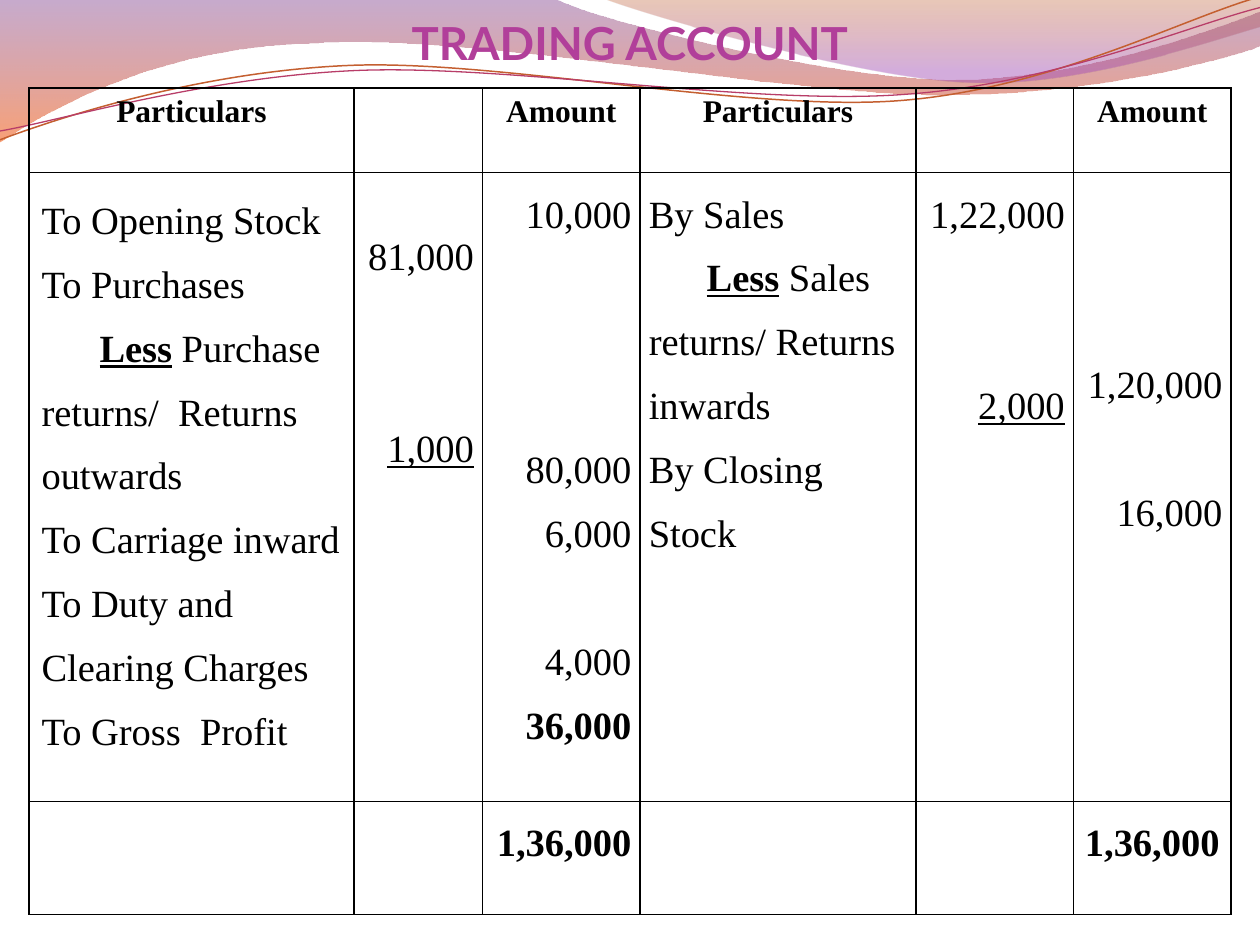
from pptx import Presentation
from pptx.dml.color import RGBColor
from pptx.enum.text import MSO_ANCHOR, PP_ALIGN
from pptx.oxml.xmlchemy import OxmlElement
from pptx.util import Inches, Pt

THEME = {
    "title_font": "Lato", "title_size": 26, "title": "B13F9A",
    "table_font": "Times New Roman", "header_size": 18, "entry_size": 22,
    "ink": "000000", "border_width": 1,
}
LINE_SPACING = 1.5
ROW_PITCH = 0.507  # height in inches of one entry line
LESS_INDENT = 0.46

TITLE = "TRADING ACCOUNT"
HEADERS = ["Particulars", "", "Amount", "Particulars", "", "Amount"]
COLUMN_WIDTHS = [2.58, 1.02, 1.25, 2.19, 1.25, 1.25]
ROW_HEIGHTS = [0.67, 4.99, 0.9]

# Descriptions; a pair is an indented deduction: underlined word, remainder.
DEBITS = ["To Opening Stock", "To Purchases",
          ("Less", " Purchase returns/  Returns outwards"),
          "To Carriage inward", "To Duty and Clearing Charges", "To Gross  Profit"]
CREDITS = ["By Sales", ("Less", " Sales returns/ Returns inwards"), "By Closing Stock"]

# Figures: line they stand on, amount, emphasis.
AMOUNTS = {
    1: [(1, "81,000", ""), (4, "1,000", "underline")],
    2: [(0, "10,000", ""), (4, "80,000", ""), (5, "6,000", ""),
        (7, "4,000", ""), (8, "36,000", "bold")],
    4: [(0, "1,22,000", ""), (3, "2,000", "underline")],
    5: [(3, "1,20,000", ""), (5, "16,000", "")],
}
TOTALS = {2: ("1,36,000", PP_ALIGN.RIGHT), 5: ("1,36,000", PP_ALIGN.CENTER)}

# Outlines: a start point, then line ends (2 values) or cubic curves (6 values).
# Gradient stops: position, colour, opacity in percent.
BANDS = [
    ([(0, 0), (4.4, -0.01), (4.76, 0.17, 6.64, 0.63, 7.58, 0.63),
      (8.53, 0.63, 9.58, 0.26, 10, 0.09), (10.01, 0.36),
      (9.83, 0.44, 8.7, 0.76, 7.46, 0.75), (6.22, 0.75, 3.82, 0.28, 2.57, 0.34),
      (1.29, 0.36, 0.46, 0.83, -0.01, 1.13), (0, 0)],
     [(0, "834591", 45), (1, "F35307", 55)]),
    ([(4.79, -0.01), (5.09, 0.11, 6.82, 0.62, 7.69, 0.65),
      (8.56, 0.69, 9.61, 0.32, 10, 0.21), (10, 0), (4.79, -0.01)],
     [(0, "B74915", 30), (0.8, "A14BB4", 45)]),
]
WAVES = [
    ([(0, 1.11), (0.48, 0.93, 1.58, 0.57, 2.77, 0.52),
      (3.95, 0.47, 5.93, 0.89, 7.13, 0.8), (8.33, 0.71, 9.38, 0.15, 9.98, -0.02)],
     "C45F30", 0.85),
    ([(0, 1.04), (0.47, 0.96, 1.64, 0.61, 2.83, 0.56),
      (4.03, 0.51, 5.97, 0.84, 7.17, 0.75), (8.36, 0.67, 9.41, 0.21, 10, 0.06)],
     "B83D68", 0.75),
]


def color(name):
    return RGBColor.from_string(THEME.get(name, name))


def draw_outline(slide, outline, close):
    """Draw through every point, then merge each curve's three lines into one."""
    start, *rest = [(Inches(segment[i]), Inches(segment[i + 1]))
                    for segment in outline for i in range(0, len(segment), 2)]
    builder = slide.shapes.build_freeform(*start)
    builder.add_line_segments(rest, close=close)
    shape = builder.convert_to_shape()
    shape.shadow.inherit = False
    lines = iter(shape._element.xpath(".//a:path/a:lnTo"))
    for segment in outline[1:]:
        parts = [next(lines) for _ in range(len(segment) // 2)]
        if len(parts) == 3:
            curve = OxmlElement("a:cubicBezTo")
            parts[0].addprevious(curve)
            for part in parts:
                curve.append(part[0])
                part.getparent().remove(part)
    return shape


def draw_band(slide, outline, stops):
    band = draw_outline(slide, outline, close=True)
    band.line.fill.background()
    band.fill.gradient()
    band.fill.gradient_angle = 270
    for stop, (position, shade, _) in zip(band.fill.gradient_stops, stops):
        stop.position = position
        stop.color.rgb = color(shade)
    for rgb, (_, _, opacity) in zip(band._element.xpath(".//a:gs/a:srgbClr"), stops):
        alpha = OxmlElement("a:alpha")
        alpha.set("val", str(opacity * 1000))
        rgb.append(alpha)


def draw_wave(slide, outline, shade, width):
    wave = draw_outline(slide, outline, close=False)
    wave.fill.background()
    wave.line.color.rgb = color(shade)
    wave.line.width = Pt(width)


def set_font(font, family, size, shade, bold=False):
    font.name, font.size, font.bold = THEME[family], Pt(THEME[size]), bold
    font.color.rgb = color(shade)


def set_borders(cell):
    properties = cell._tc.get_or_add_tcPr()
    for index, side in enumerate(("a:lnL", "a:lnR", "a:lnT", "a:lnB")):
        border, fill, rgb = map(OxmlElement, (side, "a:solidFill", "a:srgbClr"))
        border.set("w", str(Pt(THEME["border_width"])))
        rgb.set("val", THEME["ink"])
        fill.append(rgb)
        border.append(fill)
        properties.insert(index, border)


def tighten(cell):
    cell.margin_left = cell.margin_right = Inches(0.07)
    cell.margin_top = cell.margin_bottom = 0


def entry_paragraph(cell, index, align=PP_ALIGN.LEFT, bold=False):
    frame = cell.text_frame
    paragraph = frame.add_paragraph() if index else frame.paragraphs[0]
    paragraph.alignment, paragraph.line_spacing = align, LINE_SPACING
    set_font(paragraph.font, "table_font", "entry_size", "ink", bold)
    return paragraph


def fill_descriptions(cell, entries):
    for index, entry in enumerate(entries):
        paragraph = entry_paragraph(cell, index)
        if isinstance(entry, str):
            paragraph.add_run().text = entry
            continue
        paragraph._p.get_or_add_pPr().set("indent", str(Inches(LESS_INDENT)))
        less, remainder = paragraph.add_run(), paragraph.add_run()
        less.text, remainder.text = entry
        less.font.bold = less.font.underline = True


def fill_amounts(cell, figures):
    """Set each figure on its line, with spacing for the lines left open."""
    tighten(cell)
    first_line = figures[0][0]
    if first_line:  # the first open line is single spaced
        cell.margin_top = Inches(ROW_PITCH * (first_line - 1 + 1 / LINE_SPACING))
    previous = first_line - 1
    for index, (line, amount, emphasis) in enumerate(figures):
        paragraph = entry_paragraph(cell, index, PP_ALIGN.RIGHT, emphasis == "bold")
        paragraph.space_before = Inches(ROW_PITCH * (line - previous - 1))
        paragraph.add_run().text = amount
        paragraph.font.underline = emphasis == "underline"
        previous = line


def add_account(slide):
    account = slide.shapes.add_table(
        len(ROW_HEIGHTS), len(COLUMN_WIDTHS), Inches(0.23), Inches(0.7),
        Inches(sum(COLUMN_WIDTHS)), Inches(sum(ROW_HEIGHTS))).table
    account.first_row = account.horz_banding = False
    for column, width in zip(account.columns, COLUMN_WIDTHS):
        column.width = Inches(width)
    for row, height in zip(account.rows, ROW_HEIGHTS):
        row.height = Inches(height)
    for cell in account.iter_cells():
        cell.fill.background()
        set_borders(cell)
    for column, header in enumerate(HEADERS):
        if header:
            paragraph = account.cell(0, column).text_frame.paragraphs[0]
            paragraph.text, paragraph.alignment = header, PP_ALIGN.CENTER
            set_font(paragraph.font, "table_font", "header_size", "ink", bold=True)
    fill_descriptions(account.cell(1, 0), DEBITS)
    tighten(account.cell(1, 3))
    fill_descriptions(account.cell(1, 3), CREDITS)
    for column, figures in AMOUNTS.items():
        fill_amounts(account.cell(1, column), figures)
    for column, (total, align) in TOTALS.items():
        tighten(account.cell(2, column))
        entry_paragraph(account.cell(2, column), 0, align, bold=True).text = total


def add_title(slide):
    title = slide.shapes.title
    title.left, title.top, title.width, title.height = map(Inches, (0.5, 0, 9, 0.55))
    slide.shapes._spTree.append(title._element)  # in front of the bands
    frame = title.text_frame
    frame.margin_left = frame.margin_right = frame.margin_bottom = 0
    frame.margin_top = Inches(0.05)
    frame.vertical_anchor = MSO_ANCHOR.BOTTOM
    paragraph = frame.paragraphs[0]
    paragraph.text, paragraph.alignment = TITLE, PP_ALIGN.CENTER
    set_font(paragraph.font, "title_font", "title_size", "title", bold=True)


def main():
    deck = Presentation()
    deck.slide_width, deck.slide_height = Inches(10), Inches(7.5)
    slide = deck.slides.add_slide(deck.slide_layouts[5])
    for band in BANDS:
        draw_band(slide, *band)
    for wave in WAVES:
        draw_wave(slide, *wave)
    add_title(slide)
    add_account(slide)
    deck.save("out.pptx")


if __name__ == "__main__":
    main()
